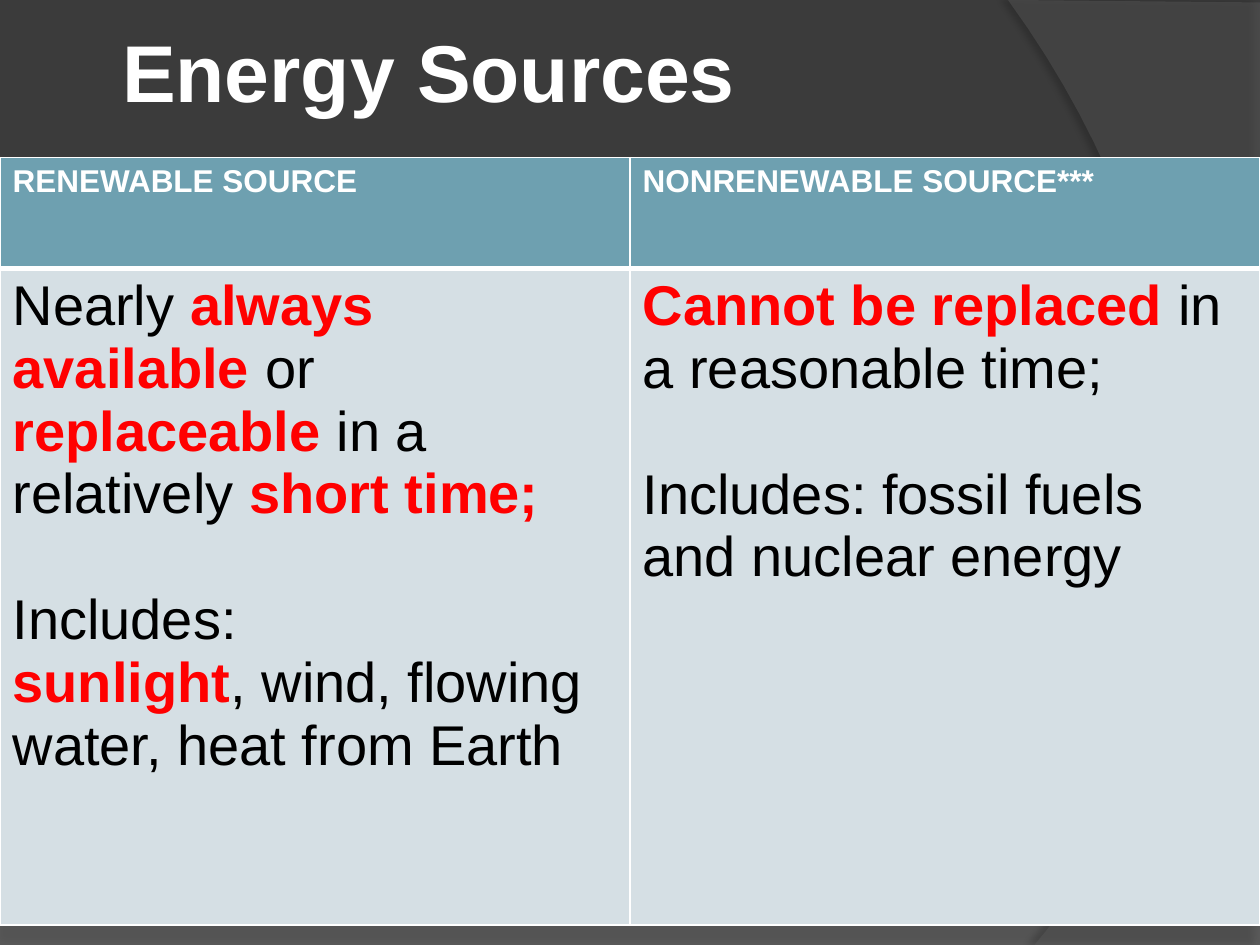
from dataclasses import dataclass

from lxml.etree import SubElement
from pptx import Presentation
from pptx.dml.color import RGBColor as RGB
from pptx.enum.text import MSO_ANCHOR as Anchor
from pptx.oxml import parse_xml
from pptx.oxml.ns import nsdecls, qn
from pptx.util import Inches, Pt


@dataclass(frozen=True)
class Theme:
    """Colours, font and type sizes of the slide."""
    back: str = "3B3B3B"
    wave: str = "7F7F7F"
    arc: str = "5E5E5E"
    white: str = "FFFFFF"
    black: str = "000000"
    red: str = "FF0000"
    head: str = "6EA0B0"
    body: str = "D5DFE4"
    font: str = "Arial"
    title: int = 46
    label: int = 18
    text: int = 32


T = Theme()
HEADS = ["RENEWABLE SOURCE", "NONRENEWABLE SOURCE***"]
BODIES = [
    [
        ["Nearly ", "*always available ", "or ", "*replaceable",
         " in a relatively ", "*short time;"],
        ["Includes:"],
        ["*sunlight", ", wind, flowing water, heat from Earth"],
    ],
    [
        ["*Cannot be replaced ", "in a reasonable time;"],
        ["Includes: fossil fuels and nuclear energy"],
    ],
]


def write(para, text, size=T.text, color=T.black, bold=False):
    """Add one formatted run to a paragraph."""
    run = para.add_run()
    run.text = text
    font = run.font
    font.name, font.size, font.bold = T.font, Pt(size), bold
    font.color.rgb = RGB.from_string(color)


def curve(start, c1, c2, end, steps=40):
    """Return points along a cubic curve, without its start."""
    points = []
    for i in range(1, steps + 1):
        t = i / steps
        u = 1 - t
        points.append(tuple(
            u**3 * a + 3 * u * u * t * b + 3 * u * t * t * c + t**3 * d
            for a, b, c, d in zip(start, c1, c2, end)))
    return points


def veil(slide, box, points, color, alpha, shade):
    """Draw a translucent outline with a soft shadow inside the box."""
    left, top = box[:2]
    spots = [(Inches(left + x), Inches(top + y)) for x, y in points]
    build = slide.shapes.build_freeform(*spots[0], scale=1.0)
    build.add_line_segments(spots[1:], close=True)
    shape = build.convert_to_shape()
    shape.shadow.inherit = False
    shape.fill.solid()
    shape.fill.fore_color.rgb = RGB.from_string(color)
    shape.line.fill.background()
    props = shape._element.spPr
    tint = props.find(qn("a:solidFill")).find(qn("a:srgbClr"))
    SubElement(tint, qn("a:alpha"), val=str(alpha * 1000))
    dark, blur, dist, turn = shade
    cast = SubElement(
        props.find(qn("a:effectLst")), qn("a:outerShdw"),
        blurRad=str(Pt(blur)), dist=str(Pt(dist)), dir=str(turn * 60000),
        algn="ctr", rotWithShape="0")
    ink = SubElement(cast, qn("a:srgbClr"), val=T.black)
    SubElement(ink, qn("a:alpha"), val=str(dark * 1000))


def add_wave(slide, box):
    """Place the sweep along the foot of the slide."""
    wide, high = box[2:]
    start = (wide, 0)
    points = [(0, 1.85), (0, high), (wide, high), start]
    points += curve(start, (5.59, 2.09), (3.91, 1.99), (0, 1.85))
    veil(slide, box, points, T.wave, 45, (35, 4, 3.5, 270))


def add_arc(slide, box):
    """Place the curved panel at the right of the slide."""
    wide, high = box[2:]
    start = (0.21, high)
    points = [(wide, 0.02), (wide, high), start]
    points += curve(start, (1.35, 6.19), (2.18, 3), (0, 0))
    veil(slide, box, points, T.arc, 40, (45, 4, 4, 180))


def add_title(slide, box):
    """Place the slide title."""
    frame = slide.shapes.add_textbox(*map(Inches, box)).text_frame
    frame.word_wrap = True
    frame.vertical_anchor = Anchor.MIDDLE
    frame.margin_left = frame.margin_right = Inches(0.05)
    frame.margin_top = frame.margin_bottom = Inches(0.05)
    write(frame.paragraphs[0], "Energy Sources", T.title, T.white, True)


def dress(cell, color, top=1, base=1):
    """Fill a cell and draw its white borders."""
    cell.fill.solid()
    cell.fill.fore_color.rgb = RGB.from_string(color)
    props = cell._tc.get_or_add_tcPr()
    sides = {"L": 1, "R": 1, "T": top, "B": base}
    for i, (side, width) in enumerate(sides.items()):
        props.insert(i, parse_xml(
            f'<a:ln{side} {nsdecls("a")} w="{Pt(width)}"><a:solidFill>'
            f'<a:srgbClr val="{T.white}"/></a:solidFill></a:ln{side}>'))


def fill_body(cell, paras):
    """Write body paragraphs, with starred pieces in bold red."""
    frame = cell.text_frame
    for i, parts in enumerate(paras):
        para = frame.add_paragraph() if i else frame.paragraphs[0]
        if i == 1:
            para.space_before = Pt(36)
        for part in parts:
            key = part.startswith("*")
            write(para, part.lstrip("*"), color=T.red if key else T.black,
                  bold=key)


def add_grid(slide, box):
    """Place the table comparing the two kinds of source."""
    table = slide.shapes.add_table(2, 2, *map(Inches, box)).table
    high = 0.88
    table.rows[0].height = Inches(high)
    table.rows[1].height = Inches(box[3] - high)
    for col, (head, paras) in enumerate(zip(HEADS, BODIES)):
        table.columns[col].width = Inches(box[2] / 2)
        cell = table.cell(0, col)
        dress(cell, T.head, base=3)
        write(cell.text_frame.paragraphs[0], head, T.label, T.white, True)
        cell = table.cell(1, col)
        dress(cell, T.body, top=3)
        fill_body(cell, paras)


def main():
    """Build and save the slide."""
    deck = Presentation()
    deck.slide_width, deck.slide_height = Inches(10), Inches(7.5)
    slide = deck.slides.add_slide(deck.slide_layouts[6])
    back = slide.background.fill
    back.solid()
    back.fore_color.rgb = RGB.from_string(T.back)
    add_wave(slide, (0, 5.2, 10, 2.31))
    add_arc(slide, (8, 0, 2, 7.5))
    add_title(slide, (0.92, 0.06, 8.5, 1))
    add_grid(slide, (0, 1.25, 10, 6.09))
    deck.save("out.pptx")


if __name__ == "__main__":
    main()
